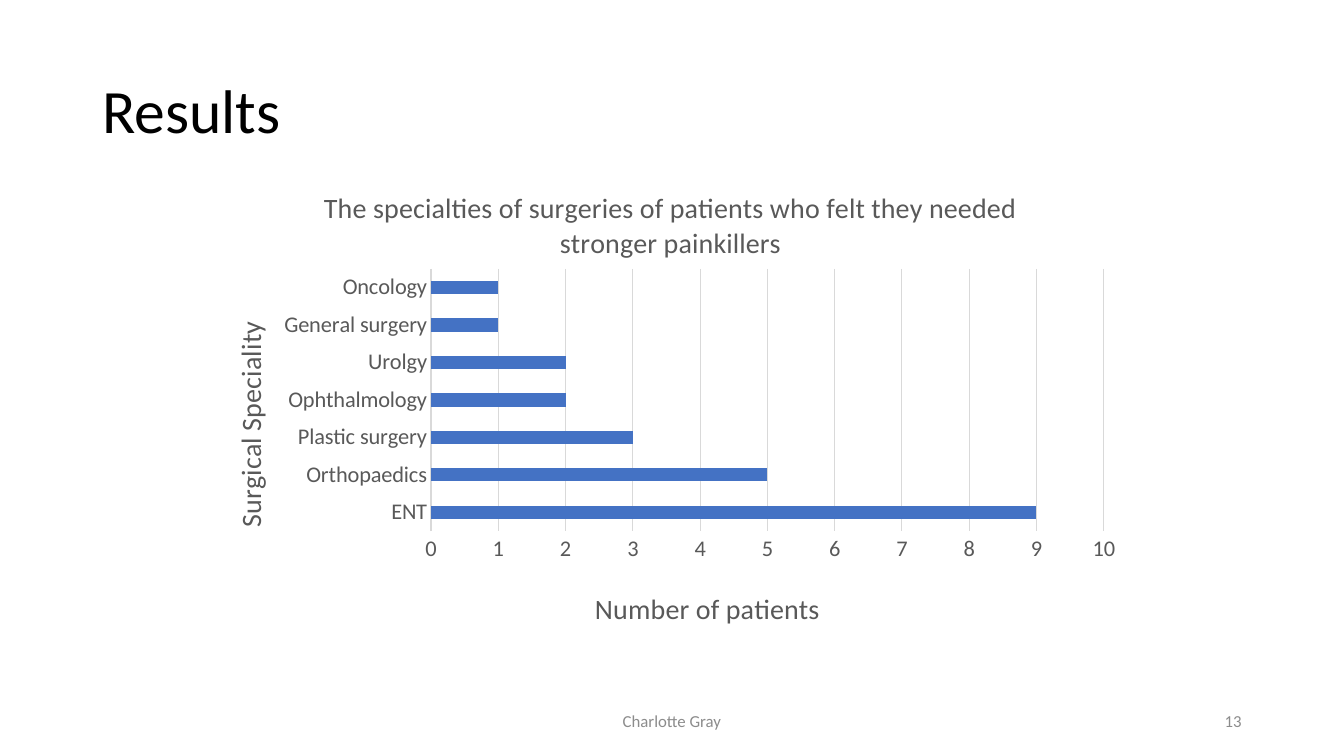
from dataclasses import dataclass

from lxml.etree import SubElement
from pptx import Presentation
from pptx.chart.data import CategoryChartData
from pptx.dml.color import RGBColor
from pptx.enum.chart import XL_CHART_TYPE, XL_TICK_MARK
from pptx.enum.text import MSO_ANCHOR, PP_ALIGN
from pptx.oxml.ns import qn
from pptx.util import Pt

COLORS = {"title": "000000", "label": "595959", "grid": "D9D9D9",
          "bar": "4472C4", "footer": "8C8C8C"}
FONT = "Calibri"

PATIENTS = {"ENT": 9, "Orthopaedics": 5, "Plastic surgery": 3, "Ophthalmology": 2,
            "Urolgy": 2, "General surgery": 1, "Oncology": 1}


@dataclass
class Footer:
    text: str
    left: float
    width: float
    align: PP_ALIGN


FOOTERS = [Footer("Charlotte Gray", 318, 324, PP_ALIGN.CENTER),
           Footer("13", 678, 216, PP_ALIGN.RIGHT)]


def rgb(name: str) -> RGBColor:
    return RGBColor.from_string(COLORS[name])


def style_font(font, size: float, color: str) -> None:
    for attr, value in {"name": FONT, "size": Pt(size), "bold": False}.items():
        setattr(font, attr, value)
    font.color.rgb = rgb(color)


def style_line(line, color: str) -> None:
    line.color.rgb = rgb(color)
    line.width = Pt(0.75)


def write_title(tf, text: str) -> None:
    tf.text = text
    style_font(tf.paragraphs[0].runs[0].font, 20, "label")


def set_layout(part, **fractions: float) -> None:
    """Place a chart part by fractions of the chart area."""
    layout = part.find(qn("c:layout"))
    if layout is None:
        layout = SubElement(part, qn("c:layout"))
        part.insert(1 if part.find(qn("c:tx")) is not None else 0, layout)
    for child in list(layout):
        layout.remove(child)
    manual = SubElement(layout, qn("c:manualLayout"))
    if "w" in fractions:
        SubElement(manual, qn("c:layoutTarget")).set("val", "inner")
    for mode in ("xMode", "yMode"):
        SubElement(manual, qn(f"c:{mode}")).set("val", "edge")
    for key, value in fractions.items():
        SubElement(manual, qn(f"c:{key}")).set("val", str(value))


def add_footer(slide, footer: Footer) -> None:
    sp = slide.shapes.add_textbox(Pt(footer.left), Pt(500.5), Pt(footer.width), Pt(28.8))
    tf = sp.text_frame
    tf.word_wrap = True
    tf.vertical_anchor = MSO_ANCHOR.MIDDLE
    p = tf.paragraphs[0]
    p.alignment = footer.align
    r = p.add_run()
    r.text = footer.text
    style_font(r.font, 12, "footer")


def add_patient_chart(slide) -> None:
    data = CategoryChartData()
    data.categories = PATIENTS.keys()
    data.add_series("Series 1", PATIENTS.values())
    chart = slide.shapes.add_chart(XL_CHART_TYPE.BAR_CLUSTERED, Pt(141), Pt(113.8),
                                   Pt(667.5), Pt(340.5), data).chart
    style_font(chart.font, 10, "title")
    chart.has_legend = False
    write_title(chart.chart_title.text_frame,
                "The specialties of surgeries of patients who felt they needed stronger painkillers")

    # Bars
    plot = chart.plots[0]
    plot.gap_width = 182
    plot.vary_by_categories = False
    fill = plot.series[0].format.fill
    fill.solid()
    fill.fore_color.rgb = rgb("bar")

    # Axes
    cat, val = chart.category_axis, chart.value_axis
    for axis, title in ((cat, "Surgical Speciality"), (val, "Number of patients")):
        write_title(axis.axis_title.text_frame, title)
        style_font(axis.tick_labels.font, 16, "label")
        axis.major_tick_mark = axis.minor_tick_mark = XL_TICK_MARK.NONE
    style_line(cat.format.line, "grid")
    val.format.line.fill.background()
    val.has_major_gridlines = True
    style_line(val.major_gridlines.format.line, "grid")
    val.minimum_scale, val.maximum_scale, val.major_unit = 0, 10, 1

    # Placement of titles and plot
    root = chart.element if hasattr(chart, "element") else chart._chartSpace
    heading, cat_title, val_title = root.iter(qn("c:title"))
    set_layout(heading, x=0.13, y=0.05)
    set_layout(cat_title, x=0.03, y=0.33)
    set_layout(val_title, x=0.42, y=0.89)
    set_layout(next(root.iter(qn("c:plotArea"))), x=0.25, y=0.23, w=0.72, h=0.55)


def main() -> None:
    prs = Presentation()
    prs.slide_width, prs.slide_height = Pt(960), Pt(540)
    slide = prs.slides.add_slide(prs.slide_layouts[5])

    # Title
    sp = slide.shapes.title
    for attr, value in {"left": 66, "top": 28.8, "width": 828, "height": 104.4}.items():
        setattr(sp, attr, Pt(value))
    tf = sp.text_frame
    tf.text = "Results"
    tf.vertical_anchor = MSO_ANCHOR.MIDDLE
    p = tf.paragraphs[0]
    p.alignment = PP_ALIGN.LEFT
    p.line_spacing = 0.9
    style_font(p.runs[0].font, 44, "title")

    add_patient_chart(slide)

    # Footer and slide number
    for footer in FOOTERS:
        add_footer(slide, footer)
    prs.save("out.pptx")


if __name__ == "__main__":
    main()
